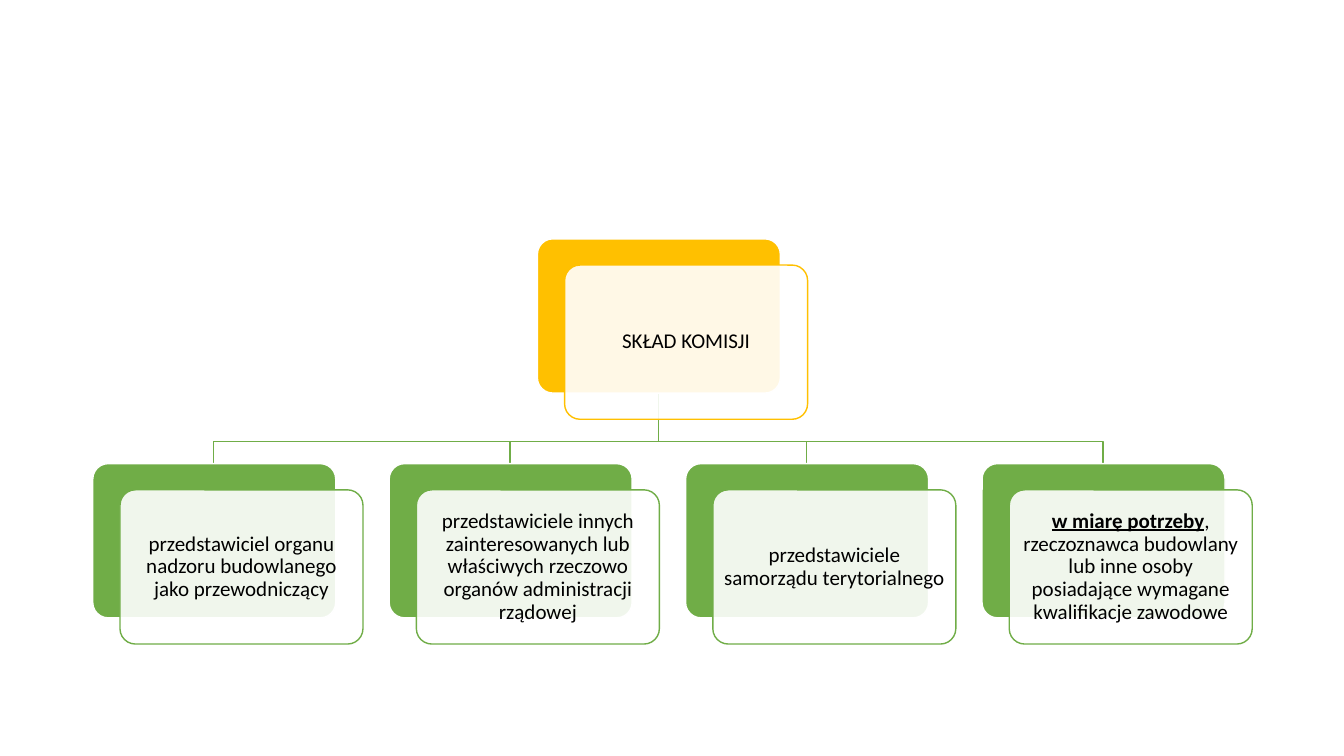
"""Draws a hierarchy of commission members as stacked rounded cards."""
from dataclasses import dataclass

from lxml import etree
from pptx import Presentation
from pptx import util as u
from pptx.dml.color import RGBColor
from pptx.enum import shapes, text
from pptx.oxml.ns import qn

PX = 9144
WIDE, HIGH = 241, 153
SHIFT_X, SHIFT_Y = 27, 26
GREEN, GOLD, WHITE, BLACK = "70AD47", "FFC000", "FFFFFF", "000000"


@dataclass
class Card:
    """A titled card with its place and colour."""
    x: int
    y: int
    hue: str
    label: str
    lead: str = ""

    @property
    def mid(self) -> int:
        """Return the horizontal centre of the back plate."""
        return self.x + WIDE // 2


def px(num: int) -> u.Emu:
    """Turn px into EMU."""
    return u.Emu(num * PX)


def tint(code: str) -> RGBColor:
    """Turn a hex string into a colour."""
    return RGBColor.from_string(code)


def edge(shape, hue: str) -> None:
    """Give a shape a thin line and no shadow."""
    shape.shadow.inherit = False
    shape.line.color.rgb = tint(hue)
    shape.line.width = u.Pt(1)


def plate(slide, x: int, y: int, fill: str, line: str):
    """Add one rounded plate."""
    shape = slide.shapes.add_shape(shapes.MSO_SHAPE.ROUNDED_RECTANGLE,
                                   px(x), px(y), px(WIDE), px(HIGH))
    shape.adjustments[0] = 0.1
    shape.fill.solid()
    shape.fill.fore_color.rgb = tint(fill)
    edge(shape, line)
    return shape


def write(para, words: str, **extra: bool) -> None:
    """Add a run of text to a paragraph."""
    run = para.add_run()
    run.text = words
    look = {"name": "Calibri", "size": u.Pt(15), **extra}
    for key, val in look.items():
        setattr(run.font, key, val)
    run.font.color.rgb = tint(BLACK)


def draw(slide, card: Card) -> None:
    """Draw the back plate and the clear front plate with text."""
    plate(slide, card.x, card.y, card.hue, card.hue).line.color.rgb = tint(WHITE)
    front = plate(slide, card.x + SHIFT_X, card.y + SHIFT_Y, WHITE, card.hue)
    color = front.fill._xPr.find(qn("a:solidFill"))[0]
    etree.SubElement(color, qn("a:alpha")).set("val", "90000")
    frame = front.text_frame
    form = {"word_wrap": True, "vertical_anchor": text.MSO_ANCHOR.MIDDLE}
    form |= {f"margin_{side}": px(6) for side in ("left", "top", "right", "bottom")}
    for key, val in form.items():
        setattr(frame, key, val)
    para = frame.paragraphs[0]
    para.alignment = text.PP_ALIGN.CENTER
    para.line_spacing = 0.9
    if card.lead:
        write(para, card.lead, bold=True, underline=True)
    write(para, card.label)


def link(slide, top: Card, low: Card) -> None:
    """Draw a bent line from the top card to a lower one."""
    start, bend = top.y + HIGH, low.y - 22
    pen = slide.shapes.build_freeform(top.mid, start, scale=PX)
    pen.add_line_segments([(top.mid, bend), (low.mid, bend), (low.mid, low.y)],
                          close=False)
    line = pen.convert_to_shape()
    line.fill.background()
    edge(line, GREEN)


def main() -> None:
    """Build and save the slide."""
    deck = Presentation()
    deck.slide_width, deck.slide_height = px(1333), px(750)
    slide = deck.slides.add_slide(deck.slide_layouts[6])
    root = Card(533, 237, GOLD, "SKŁAD KOMISJI")
    roles = [
        ("", "przedstawiciel organu nadzoru budowlanego jako przewodniczący"),
        ("", "przedstawiciele innych zainteresowanych lub właściwych rzeczowo "
             "organów administracji rządowej"),
        ("", "przedstawiciele samorządu terytorialnego"),
        ("w miarę potrzeby", ", rzeczoznawca budowlany lub inne osoby "
                             "posiadające wymagane kwalifikacje zawodowe"),
    ]
    team = [Card(92 + 294 * i, 460, GREEN, label, lead)
            for i, (lead, label) in enumerate(roles)]
    for card in reversed(team):
        link(slide, root, card)
    for card in [root, *team]:
        draw(slide, card)
    deck.save("out.pptx")


if __name__ == "__main__":
    main()
